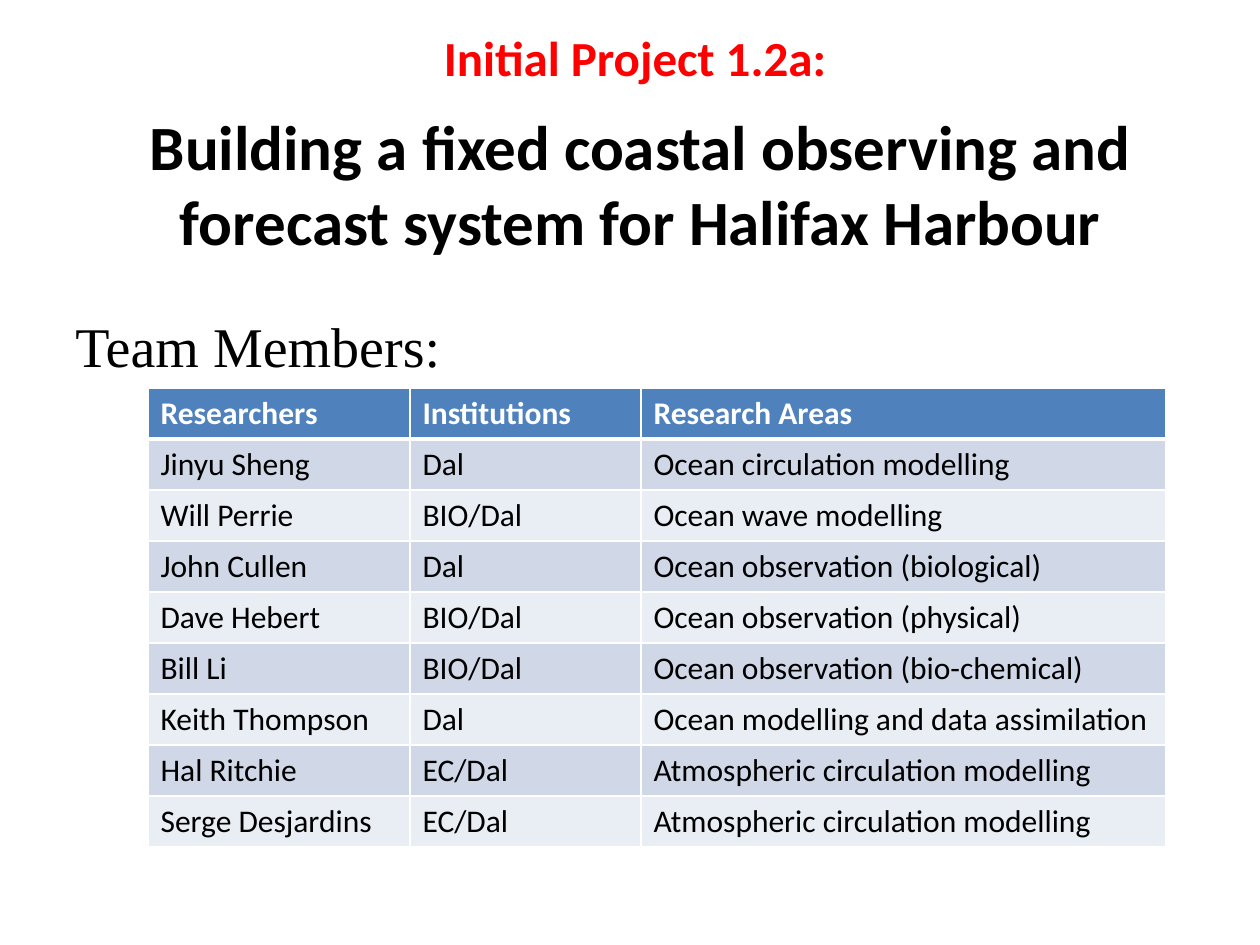
from lxml.etree import SubElement
from pptx import Presentation
from pptx.dml.color import RGBColor as RGB
from pptx.enum.text import MSO_AUTO_SIZE as Auto, PP_ALIGN as Align
from pptx.oxml.ns import qn
from pptx.util import Emu, Pt

WHITE, BLACK, RED = "FFFFFF", "000000", "FF0000"
HEAD, BANDS = "4F81BD", ("E9EDF4", "D0D8E8")

TITLE = [
    ("Initial Project 1.2a: ", 28, RED),
    ("Building a fixed coastal observing and forecast system for Halifax Harbour", 36, BLACK),
]
TEAM = [
    ("Researchers", "Institutions", "Research Areas"),
    ("Jinyu Sheng", "Dal", "Ocean circulation modelling"),
    ("Will Perrie", "BIO/Dal", "Ocean wave modelling"),
    ("John Cullen", "Dal", "Ocean observation (biological)"),
    ("Dave Hebert", "BIO/Dal", "Ocean observation (physical)"),
    ("Bill Li", "BIO/Dal", "Ocean observation (bio-chemical)"),
    ("Keith Thompson", "Dal", "Ocean modelling and data assimilation"),
    ("Hal Ritchie", "EC/Dal", "Atmospheric circulation modelling"),
    ("Serge Desjardins", "EC/Dal", "Atmospheric circulation modelling"),
]


def px(n):
    return Emu(round(n * 914400 / 126))


def tint(code):
    return RGB.from_string(code)


class Page:
    def __init__(self, slide, face="Calibri"):
        self.slide = slide
        self.face = face

    def style(self, para, size, color, bold=False, face=None):
        font = para.font
        font.name = face or self.face
        font.size = Pt(size)
        font.bold = bold
        font.color.rgb = tint(color)

    def text(self, box, lines, wrap=True, bold=False, face=None, align=Align.LEFT, after=0):
        frame = self.slide.shapes.add_textbox(*map(px, box)).text_frame
        frame.word_wrap = wrap
        frame.auto_size = Auto.SHAPE_TO_FIT_TEXT
        for i, (words, size, color) in enumerate(lines):
            para = frame.add_paragraph() if i else frame.paragraphs[0]
            para.text = words
            para.alignment = align
            para.space_after = Pt(after)
            self.style(para, size, color, bold, face)

    def edge(self, cell, side, width):
        props = cell._tc.get_or_add_tcPr()
        line = SubElement(props, qn(f"a:ln{side}"), w=str(Pt(width)))
        fill = SubElement(line, qn("a:solidFill"))
        SubElement(fill, qn("a:srgbClr"), val=WHITE)

    def table(self, left, top, cols, high, rows):
        box = map(px, (left, top, sum(cols), high * len(rows)))
        grid = self.slide.shapes.add_table(len(rows), len(cols), *box).table
        for col, wide in zip(grid.columns, cols):
            col.width = px(wide)
        for r, row in enumerate(rows):
            grid.rows[r].height = px(high)
            for c, words in enumerate(row):
                cell = grid.cell(r, c)
                cell.text = words
                self.style(cell.text_frame.paragraphs[0], 18, BLACK if r else WHITE, r == 0)
                for side in "LRTB":
                    heavy = (r, side) in ((0, "B"), (1, "T"))
                    self.edge(cell, side, 3 if heavy else 1)
                cell.fill.solid()
                cell.fill.fore_color.rgb = tint(BANDS[r % 2] if r else HEAD)


def main():
    deck = Presentation()
    deck.slide_width, deck.slide_height = px(1260), px(945)
    page = Page(deck.slides.add_slide(deck.slide_layouts[6]))
    page.text((42, 21, 1197, 246), TITLE, bold=True, align=Align.CENTER, after=12)
    page.text((63, 305, 394, 81), [("Team Members:", 32, BLACK)], wrap=False, face="Times New Roman")
    page.table(148, 388, (262, 231, 525), 51, TEAM)
    deck.save("out.pptx")


if __name__ == "__main__":
    main()
